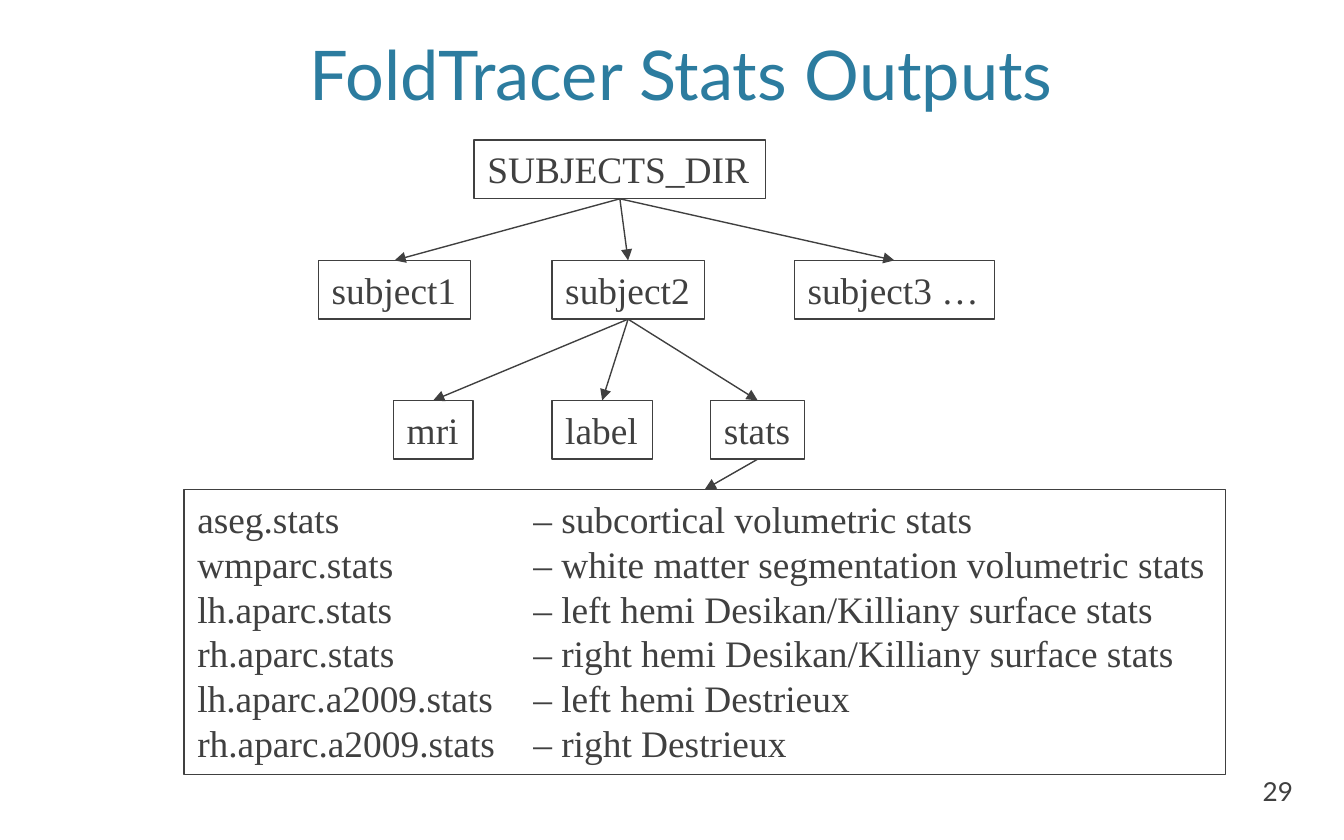
import pptx
import pptx.dml.color
import pptx.enum.shapes
import pptx.enum.text
import pptx.oxml.ns
import pptx.util
from lxml import etree

Pt = pptx.util.Pt
ALIGN = pptx.enum.text.PP_ALIGN
ANCHOR = pptx.enum.text.MSO_ANCHOR
INK = "404040"
TITLE_FORMAT = {"name": "Lato", "size": Pt(36.7), "bold": False}
TREE_FORMAT = {"name": "Times New Roman", "size": Pt(20)}
NUMBER_FORMAT = {"name": "Lato", "size": Pt(14)}

BOX_HEIGHT = 31.5
FILES_BOX = (98.6, 262.2, 558, 152.6)
NODES = {
    "SUBJECTS_DIR": (254, 75, 156.2),
    "subject1": (170.6, 139.5, 81.6),
    "subject2": (295.7, 139.5, 81.6),
    "subject3 …": (425.5, 139.5, 107.3),
    "mri": (210.8, 214.5, 42.6),
    "label": (295.7, 214.5, 53.8),
    "stats": (380.7, 214.5, 50.4),
}
BRANCHES = {
    "SUBJECTS_DIR": ["subject1", "subject2", "subject3 …"],
    "subject2": ["mri", "label", "stats"],
}
FILES = [
    ("aseg.stats", "subcortical volumetric stats"),
    ("wmparc.stats", "white matter segmentation volumetric stats"),
    ("lh.aparc.stats", "left hemi Desikan/Killiany surface stats"),
    ("rh.aparc.stats", "right hemi Desikan/Killiany surface stats"),
    ("lh.aparc.a2009.stats", "left hemi Destrieux"),
    ("rh.aparc.a2009.stats", "right Destrieux"),
]


def set_color(target, value):
    """Give a font, fill or line color format the hex color."""
    target.rgb = pptx.dml.color.RGBColor.from_string(value)


def add_child(parent, tag, **attributes):
    """Append a DrawingML element and return it."""
    return etree.SubElement(parent, pptx.oxml.ns.qn(tag), **attributes)


def format_paragraph(paragraph, font_format, color, alignment):
    """Apply font values, color and alignment to a paragraph's runs."""
    paragraph.alignment = alignment
    for run in paragraph.runs:
        for name, value in font_format.items():
            setattr(run.font, name, value)
        set_color(run.font.color, color)


def place_title(slide, box, text):
    """Move the title placeholder into the box and fill it."""
    title = slide.shapes.title
    for name, value in zip(("left", "top", "width", "height"), box):
        setattr(title, name, Pt(value))
    title.text_frame.text = text
    title.text_frame.vertical_anchor = ANCHOR.BOTTOM
    format_paragraph(title.text_frame.paragraphs[0], TITLE_FORMAT, "2C7C9F", ALIGN.CENTER)


def add_box(slide, box, text):
    """Add an outlined rectangle with left-aligned text."""
    shape = slide.shapes.add_shape(
        pptx.enum.shapes.MSO_SHAPE.RECTANGLE, *map(Pt, box))
    shape.shadow.inherit = False
    shape.fill.background()
    set_color(shape.line.color, INK)
    shape.line.width = Pt(0.75)
    frame = shape.text_frame
    frame.text = text
    frame.word_wrap = True
    frame.margin_right = Pt(0)
    frame.vertical_anchor = ANCHOR.TOP
    for paragraph in frame.paragraphs:
        format_paragraph(paragraph, TREE_FORMAT, INK, ALIGN.LEFT)
        paragraph.line_spacing = Pt(24)
    return shape


def add_arrow(slide, parent, child):
    """Join the parent's bottom to the child's top with an arrow."""
    arrow = slide.shapes.add_connector(
        pptx.enum.shapes.MSO_CONNECTOR.STRAIGHT, 0, 0, 0, 0)
    arrow.begin_connect(parent, 2)
    arrow.end_connect(child, 0)
    set_color(arrow.line.color, INK)
    arrow.line.width = Pt(0.75)
    add_child(arrow.line._get_or_add_ln(), "a:tailEnd", type="triangle")
    add_child(arrow._element.spPr, "a:effectLst")


def add_files(slide, box):
    """Add the box of file names with tabbed descriptions."""
    shape = add_box(slide, box, "\n".join(f"{name}\t– {use}" for name, use in FILES))
    for paragraph in shape.text_frame.paragraphs:
        tabs = add_child(paragraph._p.get_or_add_pPr(), "a:tabLst")
        add_child(tabs, "a:tab", pos=str(Pt(180)), algn="l")
    return shape


def add_tree(slide, files_box):
    """Add the directory tree and the file list under stats."""
    shapes = {
        name: add_box(slide, (left, top, width, BOX_HEIGHT), name)
        for name, (left, top, width) in NODES.items()
    }
    files = add_files(slide, files_box)
    for parent, children in BRANCHES.items():
        for child in children:
            add_arrow(slide, shapes[parent], shapes[child])
    add_arrow(slide, shapes["stats"], files)


def add_slide_number(slide, box, text):
    """Add the right-aligned page number."""
    frame = slide.shapes.add_textbox(*map(Pt, box)).text_frame
    frame.text = text
    frame.word_wrap = True
    frame.vertical_anchor = ANCHOR.MIDDLE
    format_paragraph(frame.paragraphs[0], NUMBER_FORMAT, INK, ALIGN.RIGHT)


def main():
    """Build and save the presentation."""
    presentation = pptx.Presentation()
    presentation.slide_width = Pt(720)
    presentation.slide_height = Pt(450)
    slide = presentation.slides.add_slide(presentation.slide_layouts[5])
    place_title(slide, (115.2, -10, 499.7, 75), "FoldTracer Stats Outputs")
    add_tree(slide, FILES_BOX)
    add_slide_number(slide, (622, 412, 77.8, 23.8), "29")
    presentation.save("out.pptx")


if __name__ == "__main__":
    main()
